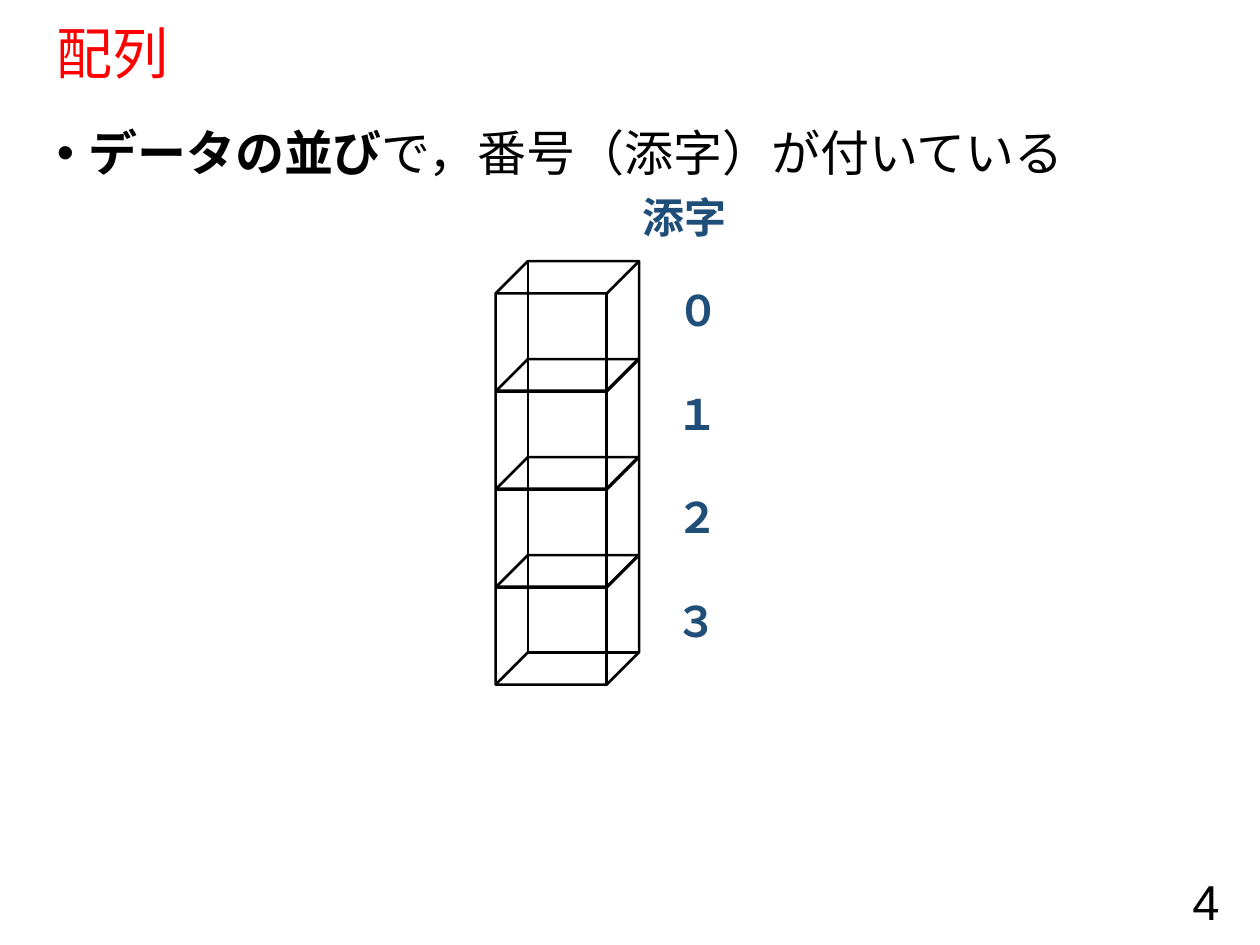
from lxml.etree import SubElement
from pptx import Presentation
from pptx.dml.color import RGBColor
from pptx.enum.shapes import MSO_CONNECTOR as Connector, MSO_SHAPE as Shape
from pptx.enum.text import MSO_ANCHOR as Anchor, PP_ALIGN as Align
from pptx.oxml.ns import qn
from pptx.util import Pt

FONT = "Arial"
BLACK, RED, NAVY = "000000", "FF0000", "1F4E79"


def color(value):
    return RGBColor.from_string(value)


class SlideBuilder:
    line_width = 1.5

    def __init__(self, slide):
        self.slide = slide

    def text(self, text, left, top, width, height, size, fill=BLACK, bold=None,
             anchor=Anchor.TOP, align=Align.LEFT, wrap=True):
        box = self.slide.shapes.add_textbox(Pt(left), Pt(top), Pt(width), Pt(height))
        frame = box.text_frame
        frame.word_wrap = wrap
        frame.vertical_anchor = anchor
        paragraph = frame.paragraphs[0]
        paragraph.alignment = align
        if text:
            paragraph.add_run().text = text
        paragraph.font.name = FONT
        paragraph.font.size = Pt(size)
        paragraph.font.bold = bold
        paragraph.font.color.rgb = color(fill)
        return paragraph

    def bullet(self, parts, left, top, width, height, size, indent):
        """Add a bulleted paragraph made of (text, bold) parts."""
        paragraph = self.text("", left, top, width, height, size)
        properties = paragraph._p.get_or_add_pPr()
        properties.set("marL", str(Pt(indent)))
        properties.set("indent", str(-Pt(indent)))
        bullet_font = SubElement(properties, qn("a:buFont"), typeface=FONT)
        bullet = SubElement(properties, qn("a:buChar"), char="•")
        properties.insert(0, bullet_font)
        properties.insert(1, bullet)
        for text, bold in parts:
            run = paragraph.add_run()
            run.text = text
            run.font.bold = bold

    def cube(self, left, top, width, height):
        cube = self.slide.shapes.add_shape(
            Shape.CUBE, Pt(left), Pt(top), Pt(width), Pt(height))
        cube.adjustments[0] = 0.25
        cube.shadow.inherit = False
        cube.fill.background()
        cube.line.color.rgb = color(BLACK)
        cube.line.width = Pt(self.line_width)

    def line(self, start, end):
        connector = self.slide.shapes.add_connector(
            Connector.STRAIGHT, *(Pt(value) for value in (*start, *end)))
        connector.line.color.rgb = color(BLACK)
        connector.line.width = Pt(self.line_width)
        SubElement(connector._element.spPr, qn("a:effectLst"))


def main():
    presentation = Presentation()
    presentation.slide_width, presentation.slide_height = Pt(720), Pt(540)
    builder = SlideBuilder(presentation.slides.add_slide(presentation.slide_layouts[6]))

    title = builder.text("配列", 25.2, 13.5, 666, 37, 32, RED, anchor=Anchor.MIDDLE)
    title.line_spacing = 0.9
    builder.bullet([("データの並び", True), ("で，番号（添字）が付いている", False)],
                   25.4, 66.6, 666, 420, 28, indent=18)
    builder.text("4", 542, 500.5, 162, 29, 28, anchor=Anchor.MIDDLE, align=Align.RIGHT)

    # Stack of array cells
    left, top, width, height, pitch = 283.2, 149.2, 82, 74, 56
    depth = height * 0.25
    indexes = "０１２３"
    for row in range(len(indexes)):
        builder.cube(left, top + row * pitch, width, height)

    # Hidden back edges of the stack
    bottom = top + (len(indexes) - 1) * pitch + height
    back_corner = (left + depth, bottom - depth)
    for end in ((left + depth, top), (left + width, bottom - depth), (left, bottom)):
        builder.line(back_corner, end)

    builder.text("添字", 360, 106, 70, 29, 24, NAVY, bold=True)
    for row, index in enumerate(indexes):
        builder.text(index, 379.9 - row * 0.3, 159 + row * 59.2, 40, 29, 24, NAVY,
                     bold=True, wrap=False)

    presentation.save("out.pptx")


if __name__ == "__main__":
    main()
